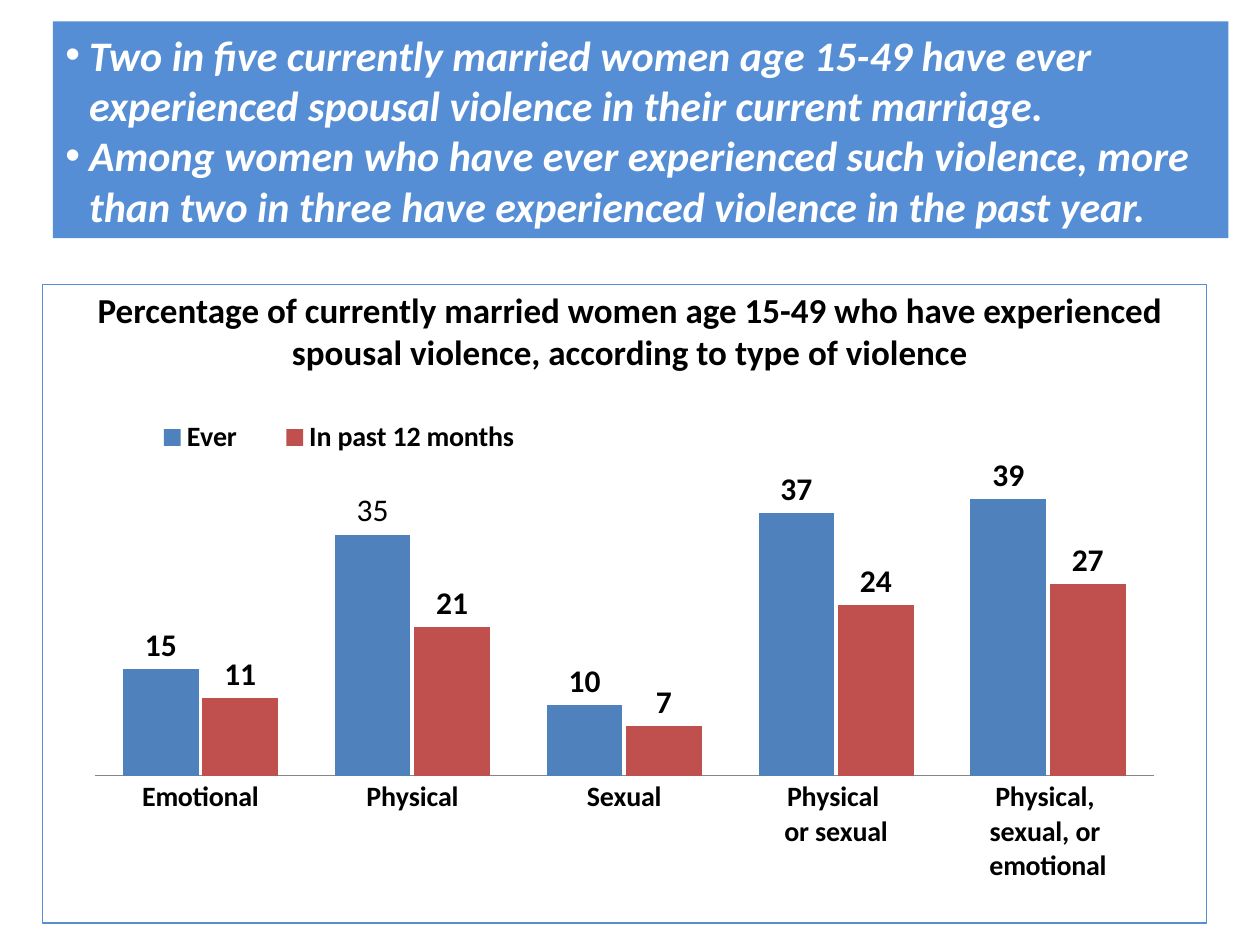
from dataclasses import dataclass

from lxml import etree
from pptx import Presentation
from pptx.chart.data import CategoryChartData
from pptx.dml.color import RGBColor
from pptx.enum.chart import XL_CHART_TYPE, XL_LABEL_POSITION, XL_LEGEND_POSITION, XL_TICK_MARK
from pptx.enum.shapes import MSO_SHAPE
from pptx.enum.text import MSO_ANCHOR, PP_ALIGN
from pptx.oxml.ns import qn
from pptx.util import Inches, Pt

COLUMN = XL_CHART_TYPE.COLUMN_CLUSTERED
OUTSIDE = XL_LABEL_POSITION.OUTSIDE_END
TOP = XL_LEGEND_POSITION.TOP
NO_TICK = XL_TICK_MARK.NONE
RECT = MSO_SHAPE.RECTANGLE
MIDDLE = MSO_ANCHOR.MIDDLE
LEFT = PP_ALIGN.LEFT
CENTER = PP_ALIGN.CENTER


@dataclass(frozen=True)
class Theme:
    face: str = "Calibri"
    ink: str = "000000"
    white: str = "FFFFFF"
    panel: str = "558ED5"
    axis: str = "868686"
    bars: tuple = ("4F81BD", "C0504D")
    lead: int = 24
    title: int = 20
    value: int = 18
    label: int = 16


def rgb(code):
    return RGBColor.from_string(code)


def place(part, index, **edges):
    for old in part.findall(qn("c:layout")):
        part.remove(old)
    layout = etree.Element(qn("c:layout"))
    manual = etree.SubElement(layout, qn("c:manualLayout"))
    if part.tag == qn("c:plotArea"):
        etree.SubElement(manual, qn("c:layoutTarget"), val="inner")
    for side in "xy":
        etree.SubElement(manual, qn(f"c:{side}Mode"), val="edge")
    for side, size in edges.items():
        etree.SubElement(manual, qn(f"c:{side}"), val=str(size))
    part.insert(index, layout)


class Deck:
    def __init__(self, theme):
        self.theme = theme
        self.show = Presentation()
        self.show.slide_width, self.show.slide_height = Inches(10), Inches(7.5)
        self.slide = self.show.slides.add_slide(self.show.slide_layouts[5])

    def style(self, font, size, color, italic=False):
        font.name = self.theme.face
        font.size = Pt(size)
        font.bold = True
        font.italic = italic
        font.color.rgb = rgb(color)

    def title(self, text, box):
        shape = self.slide.shapes.title
        shape.left, shape.top, shape.width, shape.height = map(Inches, box)
        frame = shape.text_frame
        frame.text = text
        frame.vertical_anchor = MIDDLE
        para = frame.paragraphs[0]
        para.alignment = CENTER
        self.style(para.font, self.theme.title, self.theme.ink)
        shape.element.getparent().append(shape.element)

    def panel(self, lines, box):
        shape = self.slide.shapes.add_shape(RECT, *map(Inches, box))
        shape.shadow.inherit = False
        shape.fill.solid()
        shape.fill.fore_color.rgb = rgb(self.theme.panel)
        shape.line.fill.background()
        frame = shape.text_frame
        frame.word_wrap = True
        frame.vertical_anchor = MIDDLE
        frame.text = "\n".join(lines)
        indent = Inches(0.19)
        for para in frame.paragraphs:
            para.alignment = LEFT
            props = para._p.get_or_add_pPr()
            props.set("marL", str(indent))
            props.set("indent", str(-indent))
            etree.SubElement(props, qn("a:buFont"), typeface="Arial")
            etree.SubElement(props, qn("a:buChar"), char="•")
            self.style(para.font, self.theme.lead, self.theme.white, True)

    def chart(self, names, series, box):
        theme = self.theme
        data = CategoryChartData(number_format="0")
        data.categories = names
        for name, values in series.items():
            data.add_series(name, values)
        chart = self.slide.shapes.add_chart(COLUMN, *map(Inches, box), data).chart
        chart.has_title = False
        self.style(chart.font, theme.label, theme.ink)

        plot = chart.plots[0]
        plot.gap_width, plot.overlap = 75, -5
        plot.vary_by_categories = False
        for bars, color in zip(plot.series, theme.bars):
            bars.format.fill.solid()
            bars.format.fill.fore_color.rgb = rgb(color)
            labels = bars.data_labels
            labels.show_value = True
            labels.number_format = "0"
            labels.number_format_is_linked = False
            labels.position = OUTSIDE
            self.style(labels.font, theme.value, theme.ink)

        axis = chart.category_axis
        axis.major_tick_mark = axis.minor_tick_mark = NO_TICK
        axis.format.line.color.rgb = rgb(theme.axis)
        self.style(axis.tick_labels.font, theme.label, theme.ink)
        scale = chart.value_axis
        scale.minimum_scale, scale.maximum_scale = 0, 45
        scale.has_major_gridlines = False
        scale.visible = False

        chart.has_legend = True
        chart.legend.position = TOP
        chart.legend.include_in_layout = False
        self.style(chart.legend.font, theme.label, theme.ink)
        root = chart.element.find(qn("c:chart"))
        area = root.find(qn("c:plotArea"))
        place(area, 0, x=0.045, y=0.27, w=0.91, h=0.5)
        place(root.find(qn("c:legend")), 1, x=0.07, y=0.2, w=0.37, h=0.08)

        frame = etree.Element(qn("c:spPr"))
        etree.SubElement(frame, qn("a:noFill"))
        line = etree.SubElement(frame, qn("a:ln"), w=str(Pt(0.75)))
        fill = etree.SubElement(line, qn("a:solidFill"))
        etree.SubElement(fill, qn("a:srgbClr"), val=theme.panel)
        root.addnext(frame)
        return chart

    def relabel(self, chart, row, column, text):
        label = chart.plots[0].series[row].points[column].data_label
        label.text_frame.text = text
        label.position = OUTSIDE
        font = label.text_frame.paragraphs[0].font
        self.style(font, self.theme.value, self.theme.ink)


def main():
    deck = Deck(Theme())
    chart = deck.chart(
        ["Emotional", "Physical", "Sexual", "Physical \nor sexual",
         "Physical, \nsexual, or \nemotional"],
        {"Ever": (15, 34, 10, 37, 39), "In past 12 months": (11, 21, 7, 24, 27)},
        (0.33, 2.25, 9.25, 5.08),
    )
    deck.relabel(chart, 0, 1, "35")
    deck.title(
        "Percentage of currently married women age 15-49 who have experienced "
        "spousal violence, according to type of violence",
        (0.5, 2.25, 9, 0.75),
    )
    deck.panel(
        ["Two in five currently married women age 15-49 have ever experienced "
         "spousal violence in their current marriage.",
         "Among women who have ever experienced such violence, more than two in "
         "three have experienced violence in the past year."],
        (0.42, 0.17, 9.33, 1.72),
    )
    deck.show.save("out.pptx")


if __name__ == "__main__":
    main()
